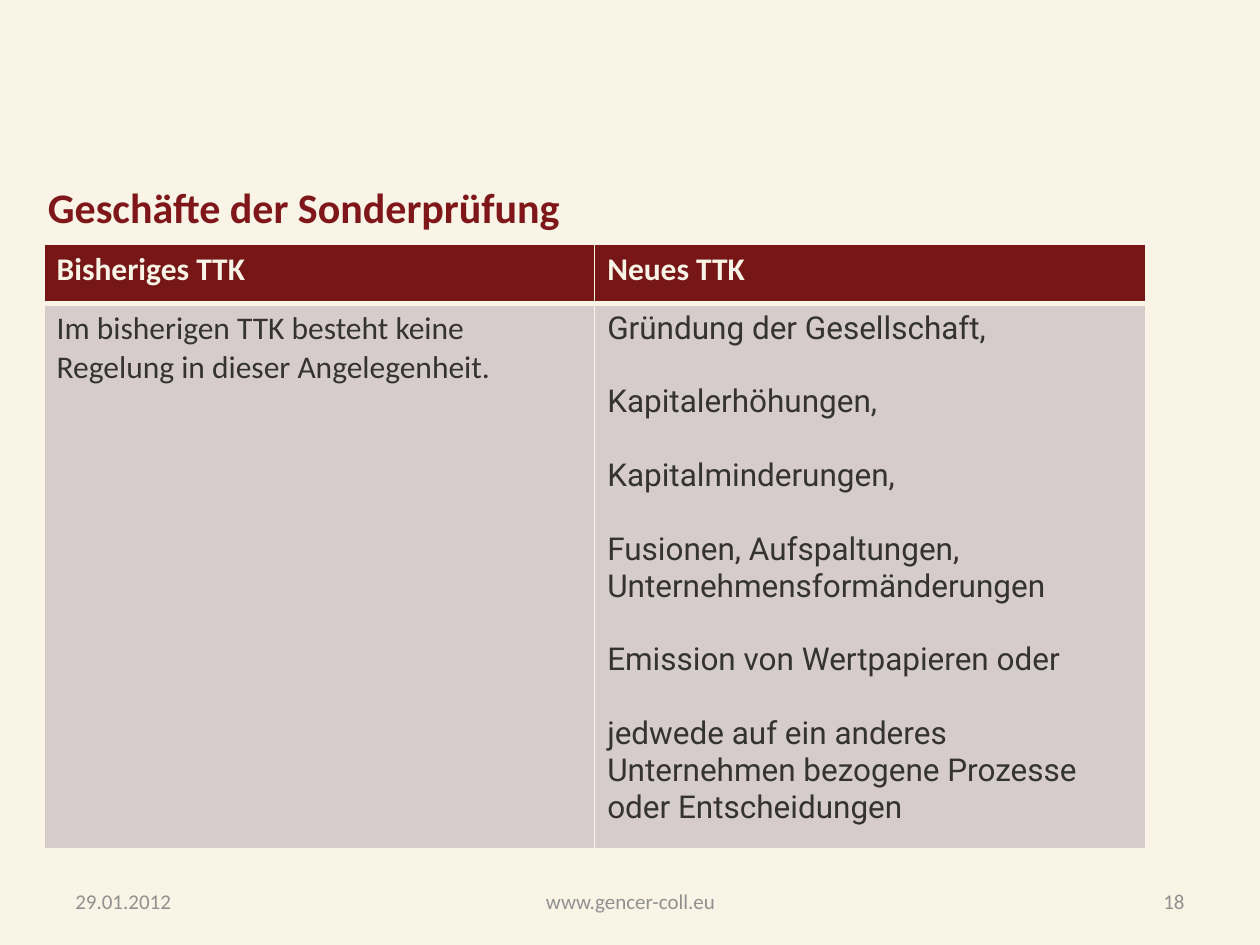
from typing import NamedTuple

from lxml import etree
from pptx import Presentation
from pptx.dml.color import RGBColor
from pptx.enum import text as t
from pptx.oxml import ns
from pptx.util import Inches, Pt

CREAM = RGBColor(0xF9, 0xF4, 0xE6)
WINE = RGBColor(0x76, 0x16, 0x17)
RED = RGBColor(0x7E, 0x16, 0x1A)
MAUVE = RGBColor(0xD6, 0xCC, 0xCC)
DARK = RGBColor(0x35, 0x33, 0x30)
GREY = RGBColor(0x90, 0x90, 0x8F)


class Note(NamedTuple):
    left: float
    width: float
    words: str
    align: t.PP_ALIGN


class Cell(NamedTuple):
    row: int
    col: int
    lines: list[str]
    face: str = "Calibri"


NOTES = [
    Note(0.5, 2.33, "29.01.2012", t.PP_ALIGN.LEFT),
    Note(3.42, 3.17, "www.gencer-coll.eu", t.PP_ALIGN.CENTER),
    Note(7.17, 2.33, "18", t.PP_ALIGN.RIGHT),
]
CELLS = [
    Cell(0, 0, ["Bisheriges TTK"]),
    Cell(0, 1, ["Neues TTK"]),
    Cell(1, 0, ["Im bisherigen TTK besteht keine Regelung in dieser Angelegenheit."]),
    Cell(1, 1, [
        "Gründung der Gesellschaft,",
        "Kapitalerhöhungen,",
        "Kapitalminderungen,",
        "Fusionen, Aufspaltungen, Unternehmensformänderungen",
        "Emission von Wertpapieren oder",
        "jedwede auf ein anderes Unternehmen bezogene Prozesse oder Entscheidungen",
    ], "Roboto"),
]


def style(font, color: RGBColor, **form) -> None:
    for key, val in form.items():
        setattr(font, key, val)
    font.color.rgb = color


def border(cell, widths: dict[str, int]) -> None:
    """Draw the cell's edges; they must stand before its fill in the XML."""
    props = cell._tc.get_or_add_tcPr()
    for spot, (side, width) in enumerate(widths.items()):
        line = etree.Element(ns.qn(f"a:ln{side}"), w=str(Pt(width)))
        fill = etree.SubElement(line, ns.qn("a:solidFill"))
        etree.SubElement(fill, ns.qn("a:srgbClr"), val=str(CREAM))
        props.insert(spot, line)


def draw_note(slide, note: Note) -> None:
    box = slide.shapes.add_textbox(
        Inches(note.left), Inches(6.95), Inches(note.width), Inches(0.4))
    frame = box.text_frame
    frame.word_wrap = True
    frame.vertical_anchor = t.MSO_ANCHOR.MIDDLE
    para = frame.paragraphs[0]
    para.text = note.words
    para.alignment = note.align
    style(para.font, GREY, name="Calibri", size=Pt(12))


def draw_cell(table, item: Cell) -> None:
    cell = table.cell(item.row, item.col)
    head = item.row == 0
    cell.fill.solid()
    cell.fill.fore_color.rgb = WINE if head else MAUVE
    border(cell, {"L": 1, "R": 1, "T": 1 if head else 3, "B": 3 if head else 1})
    frame = cell.text_frame
    for num, line in enumerate(item.lines):
        para = frame.add_paragraph() if num else frame.paragraphs[0]
        para.text = line
        if num:
            para.space_before = Pt(21)
        style(para.font, CREAM if head else DARK,
              name=item.face, size=Pt(18), bold=head)


def main() -> None:
    deck = Presentation()
    deck.slide_width, deck.slide_height = Inches(10), Inches(7.5)
    slide = deck.slides.add_slide(deck.slide_layouts[5])
    slide.background.fill.solid()
    slide.background.fill.fore_color.rgb = CREAM

    # Title
    title = slide.shapes.title
    place = {"left": 0.28, "top": 1.39, "width": 7.87, "height": 0.47}
    for key, val in place.items():
        setattr(title, key, Inches(val))
    frame = title.text_frame
    frame.vertical_anchor = t.MSO_ANCHOR.TOP
    frame.auto_size = t.MSO_AUTO_SIZE.NONE
    para = frame.paragraphs[0]
    para.text = "Geschäfte der Sonderprüfung"
    para.alignment = t.PP_ALIGN.LEFT
    style(para.font, RED, name="Calibri", size=Pt(24), bold=True)

    # Comparison table
    table = slide.shapes.add_table(
        2, 2, Inches(0.35), Inches(1.94), Inches(8.74), Inches(4.8)).table
    for row, high in zip(table.rows, (0.47, 4.33)):
        row.height = Inches(high)
    for item in CELLS:
        draw_cell(table, item)

    # Footer
    for note in NOTES:
        draw_note(slide, note)

    deck.save("out.pptx")


if __name__ == "__main__":
    main()
